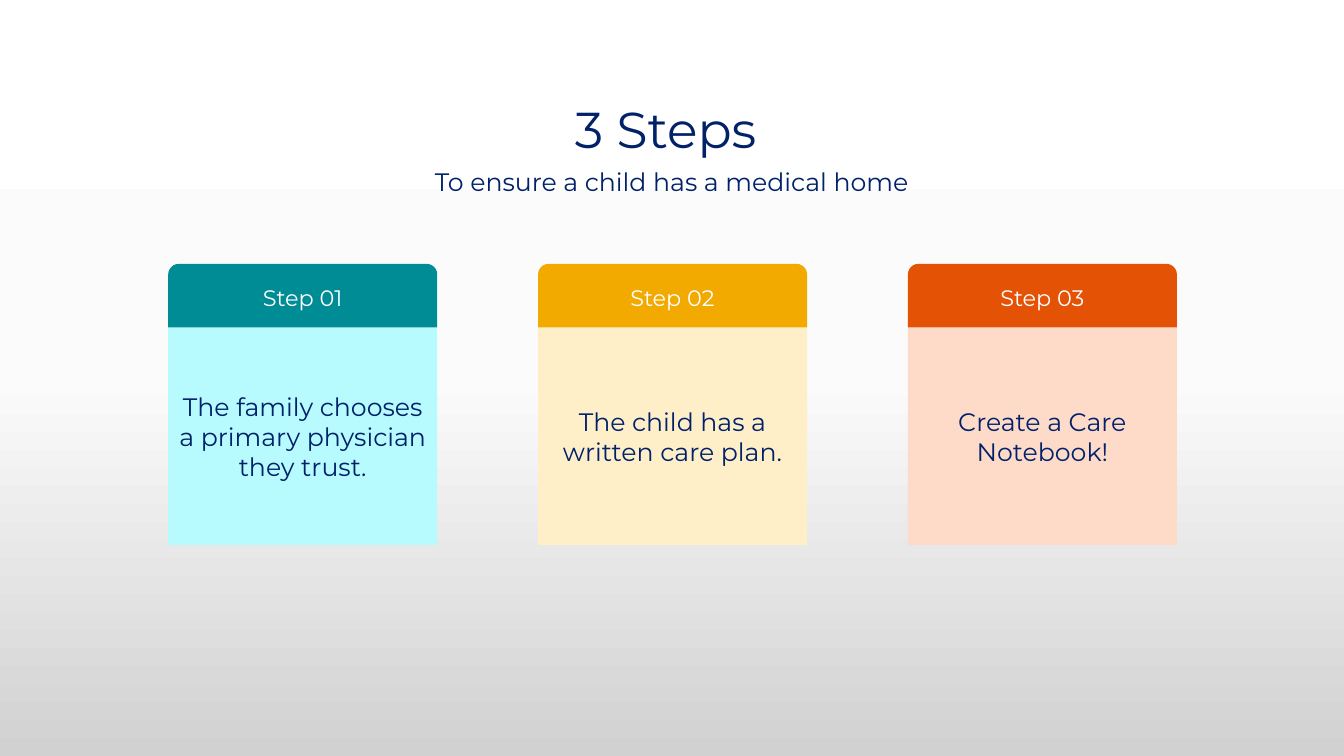
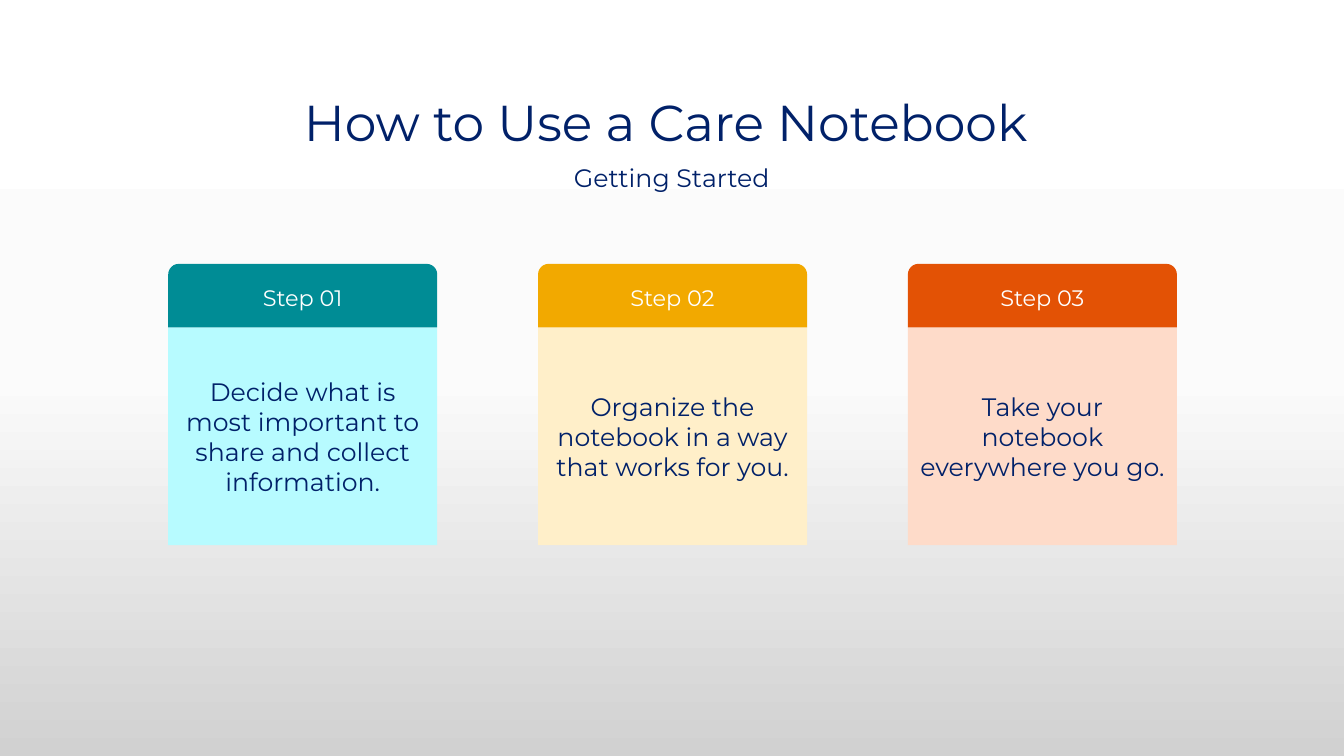
"""Build two slides of three step cards each."""
from copy import deepcopy

from pptx import Presentation
from pptx.dml.color import RGBColor
from pptx.enum import shapes, text
from pptx.oxml.ns import qn
from pptx.util import Cm, Pt

FONT = "Montserrat"
NAVY = RGBColor(0x01, 0x21, 0x69)
WHITE = RGBColor(0xFF, 0xFF, 0xFF)
PEARL = RGBColor(0xFB, 0xFB, 0xFB)
GREY = RGBColor(0xD1, 0xD1, 0xD1)
TEAL = RGBColor(0x00, 0x8C, 0x95)
AQUA = RGBColor(0xB7, 0xFB, 0xFF)
AMBER = RGBColor(0xF2, 0xA9, 0x00)
CREAM = RGBColor(0xFF, 0xEF, 0xC9)
RUST = RGBColor(0xE3, 0x52, 0x05)
PEACH = RGBColor(0xFE, 0xDB, 0xC9)

TONES = [(TEAL, AQUA), (AMBER, CREAM), (RUST, PEACH)]
LEFT, PITCH, WIDTH = 4.24, 9.32, 6.78
TOP, HEAD, BODY = 6.65, 1.6, 5.49

SLIDES = [
    ("3 Steps", 2.11, "To ensure a child has a medical home", 4.14, [
        "The family chooses a primary physician they trust.",
        "The child has a written care plan.",
        "Create a Care Notebook!"]),
    ("How to Use a Care Notebook", 1.93, "Getting Started", 4.04, [
        "Decide what is most important to share and collect information.",
        "Organize the notebook in a way that works for you.",
        "Take your notebook everywhere you go."]),
]


def paint(master):
    """Give the master its vertical three-stop gradient."""
    fill = master.background.fill
    fill.gradient()
    fill.gradient_angle = 270
    stops = master.element.find(".//" + qn("a:gsLst"))
    stops.append(deepcopy(stops[0]))
    tones = [(0, WHITE), (0.5, PEARL), (1, GREY)]
    for stop, (place, tone) in zip(fill.gradient_stops, tones):
        stop.position = place
        stop.color.rgb = tone


def write(shape, words, size, color, anchor=text.MSO_ANCHOR.MIDDLE):
    """Set centred text in a shape and return its paragraph."""
    frame = shape.text_frame
    frame.word_wrap = True
    frame.auto_size = text.MSO_AUTO_SIZE.NONE
    frame.vertical_anchor = anchor
    para = frame.paragraphs[0]
    para.alignment = text.PP_ALIGN.CENTER
    run = para.add_run()
    run.text = words
    run.font.name = FONT
    run.font.size = Pt(size)
    run.font.color.rgb = color
    return para


def add_title(slide, words, top):
    """Place and fill the title."""
    title = slide.shapes.title
    title.left, title.top = Cm(2.17), Cm(top)
    title.width, title.height = Cm(29.21), Cm(2.46)
    write(title, words, 36, NAVY).line_spacing = 0.9


def add_sub(slide, words, top):
    """Add the line under the title."""
    box = slide.shapes.add_textbox(Cm(4.23), Cm(top), Cm(25.4), Cm(1.22))
    para = write(box, words, 18, NAVY, text.MSO_ANCHOR.TOP)
    para.line_spacing = 0.9
    para.space_before = Pt(10)


def add_block(slide, kind, left, top, height, fill, words, size, color):
    """Add one filled part of a card."""
    block = slide.shapes.add_shape(
        kind, Cm(left), Cm(top), Cm(WIDTH), Cm(height))
    block.shadow.inherit = False
    block.fill.solid()
    block.fill.fore_color.rgb = fill
    block.line.fill.background()
    write(block, words, size, color)


def add_card(slide, index, words):
    """Add a card with its step tab above its body."""
    dark, pale = TONES[index]
    left = LEFT + index * PITCH
    kinds = shapes.MSO_SHAPE
    add_block(slide, kinds.RECTANGLE, left, TOP + HEAD, BODY,
              pale, words, 18, NAVY)
    add_block(slide, kinds.ROUND_2_SAME_RECTANGLE, left, TOP, HEAD,
              dark, f"Step {index + 1:02}", 16, WHITE)


def main():
    """Build and save the deck."""
    deck = Presentation()
    deck.slide_width, deck.slide_height = Cm(33.87), Cm(19.05)
    paint(deck.slide_master)
    layout = deck.slide_layouts.get_by_name("Title Only")
    for title, title_top, sub, sub_top, cards in SLIDES:
        slide = deck.slides.add_slide(layout)
        add_title(slide, title, title_top)
        add_sub(slide, sub, sub_top)
        for index, words in enumerate(cards):
            add_card(slide, index, words)
    deck.save("out.pptx")


if __name__ == "__main__":
    main()
